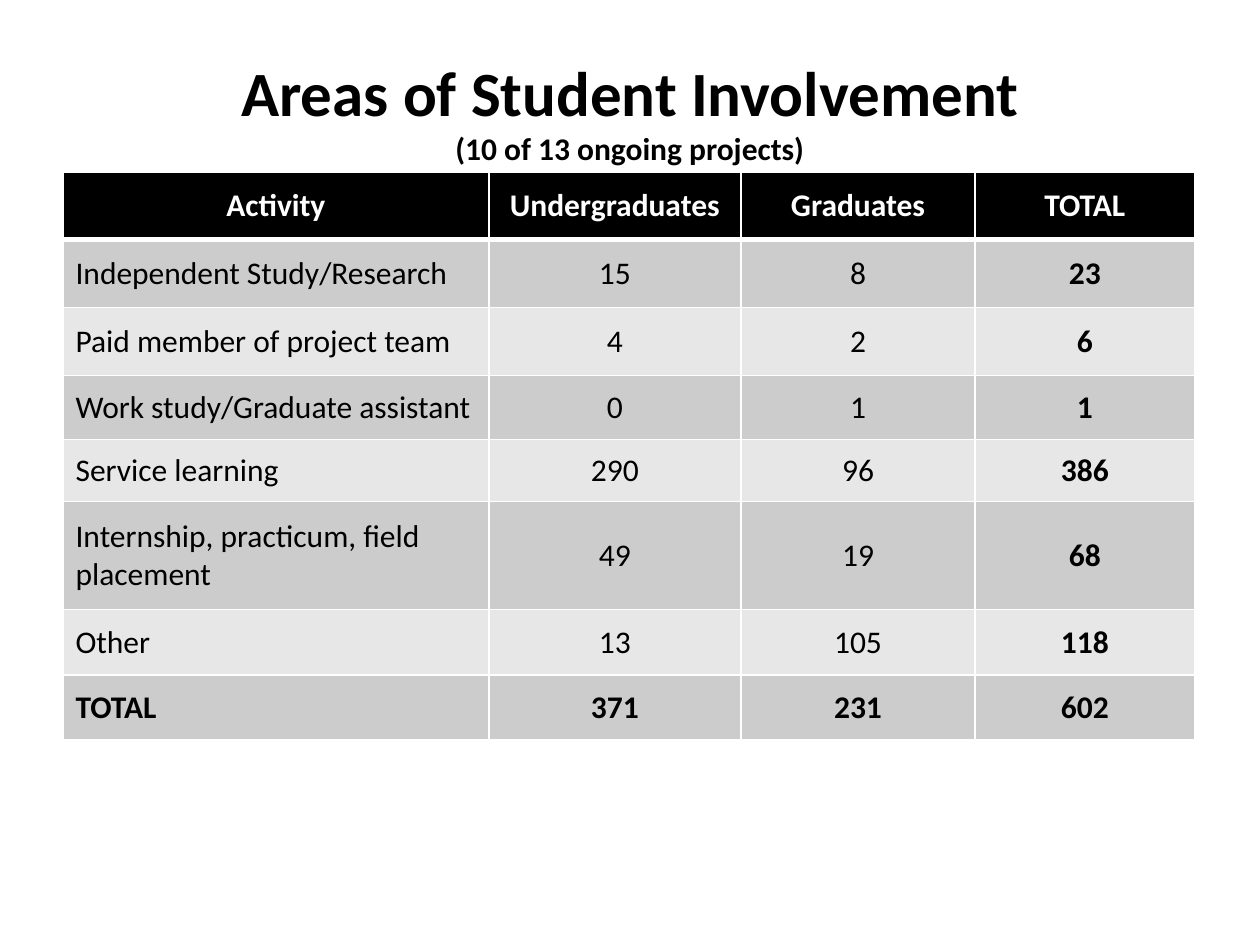
import pptx
import pptx.util
import pptx.dml.color
import pptx.enum.text
import pptx.oxml.ns
from lxml import etree

BLACK = pptx.dml.color.RGBColor(0x00, 0x00, 0x00)
WHITE = pptx.dml.color.RGBColor(0xFF, 0xFF, 0xFF)
BAND_DARK = pptx.dml.color.RGBColor(0xCC, 0xCC, 0xCC)
BAND_LIGHT = pptx.dml.color.RGBColor(0xE7, 0xE7, 0xE7)

WIDTH = pptx.util.Inches(10)
HEIGHT = pptx.util.Inches(7.5)
FONT = "Calibri"
COLUMNS = [3.38, 2, 1.86, 1.74]
ROWS = [0.53, 0.54, 0.54, 0.51, 0.49, 0.86, 0.52, 0.51]
DATA = [
    ["Activity", "Undergraduates", "Graduates", "TOTAL"],
    ["Independent Study/Research", "15", "8", "23"],
    ["Paid member of project team", "4", "2", "6"],
    ["Work study/Graduate assistant", "0", "1", "1"],
    ["Service learning", "290", "96", "386"],
    ["Internship, practicum, field placement", "49", "19", "68"],
    ["Other", "13", "105", "118"],
    ["TOTAL", "371", "231", "602"],
]


def add_run(p, text, size, color, bold):
    r = p.add_run()
    r.text = text
    r.font.name = FONT
    r.font.size = pptx.util.Pt(size)
    r.font.bold = bold
    r.font.color.rgb = color


def add_title(s, heading, note):
    sp = s.shapes.title
    sp.left, sp.top = int(WIDTH * 0.075), int(HEIGHT * 0.05)
    sp.width, sp.height = int(WIDTH * 0.85), int(HEIGHT * 0.096)
    tf = sp.text_frame
    tf.word_wrap = True
    tf.auto_size = pptx.enum.text.MSO_AUTO_SIZE.NONE
    tf.vertical_anchor = pptx.enum.text.MSO_ANCHOR.TOP
    p = tf.paragraphs[0]
    p.alignment = pptx.enum.text.PP_ALIGN.CENTER
    add_run(p, heading, 36, BLACK, True)
    p.add_line_break()
    add_run(p, note, 18, BLACK, True)


def set_border(cell, side, width):
    qn = pptx.oxml.ns.qn
    tc_pr = cell._tc.get_or_add_tcPr()
    ln = etree.SubElement(tc_pr, qn(f"a:ln{side}"), w=str(pptx.util.Pt(width)))
    fill = etree.SubElement(ln, qn("a:solidFill"))
    etree.SubElement(fill, qn("a:srgbClr"), val=str(WHITE))


def format_cell(cell, text, row, col):
    header = row == 0
    rules = {"L": 1, "R": 1, "T": 3 if row == 1 else 1, "B": 3 if header else 1}
    for side, width in rules.items():
        set_border(cell, side, width)
    cell.fill.solid()
    cell.fill.fore_color.rgb = BLACK if header else (BAND_DARK if row % 2 else BAND_LIGHT)
    cell.vertical_anchor = pptx.enum.text.MSO_ANCHOR.MIDDLE
    p = cell.text_frame.paragraphs[0]
    align = pptx.enum.text.PP_ALIGN
    p.alignment = align.CENTER if header or col else align.LEFT
    bold = row in (0, len(DATA) - 1) or col == len(COLUMNS) - 1
    add_run(p, text, 18, WHITE if header else BLACK, bold)


def add_activity_table(s):
    inches = pptx.util.Inches
    frame = s.shapes.add_table(len(ROWS), len(COLUMNS), inches(0.5), inches(1.37),
                               inches(sum(COLUMNS)), inches(sum(ROWS)))
    table = frame.table
    table.horz_banding = False
    for column, width in zip(table.columns, COLUMNS):
        column.width = inches(width)
    for row, height in zip(table.rows, ROWS):
        row.height = inches(height)
    for i, values in enumerate(DATA):
        for j, text in enumerate(values):
            format_cell(table.cell(i, j), text, i, j)


def main():
    prs = pptx.Presentation()
    prs.slide_width, prs.slide_height = WIDTH, HEIGHT
    s = prs.slides.add_slide(prs.slide_layouts[0])
    subtitle = s.placeholders[1].element
    subtitle.getparent().remove(subtitle)
    add_title(s, "Areas of Student Involvement", "(10 of 13 ongoing projects)")
    add_activity_table(s)
    prs.save("out.pptx")


if __name__ == "__main__":
    main()
